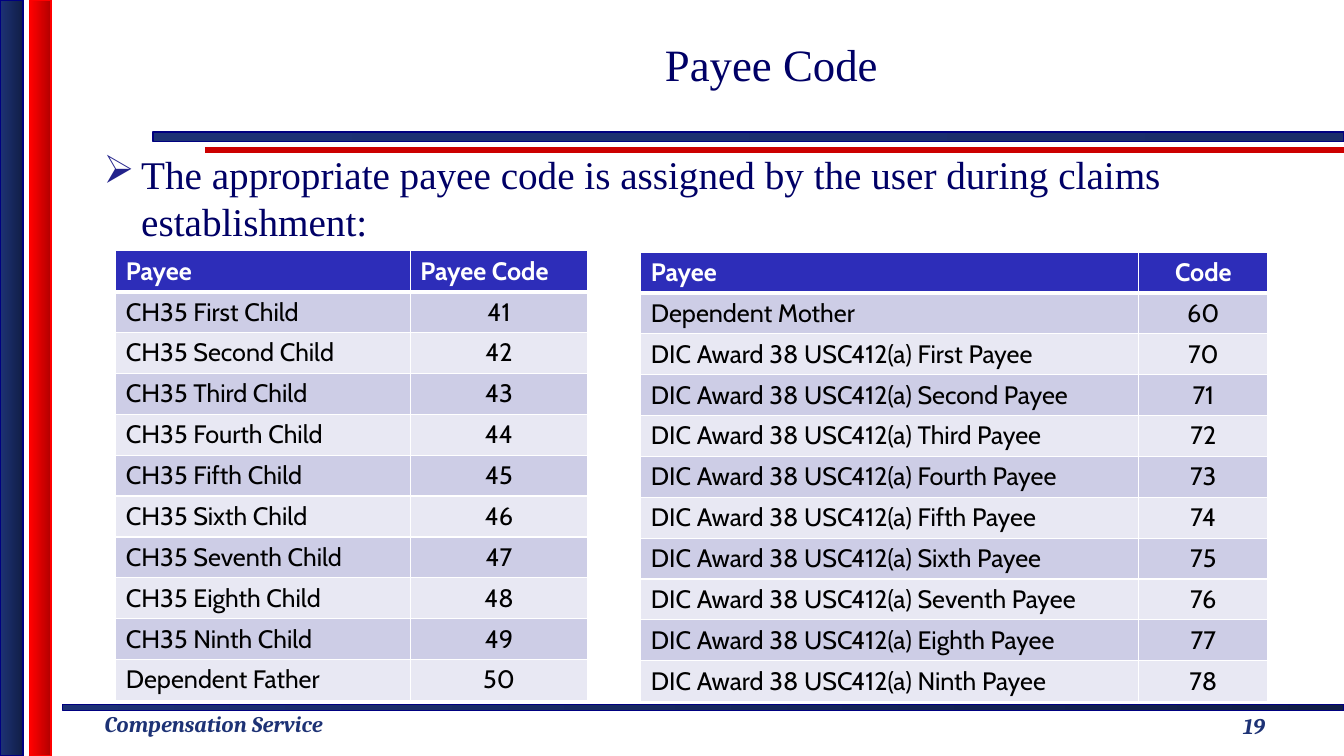
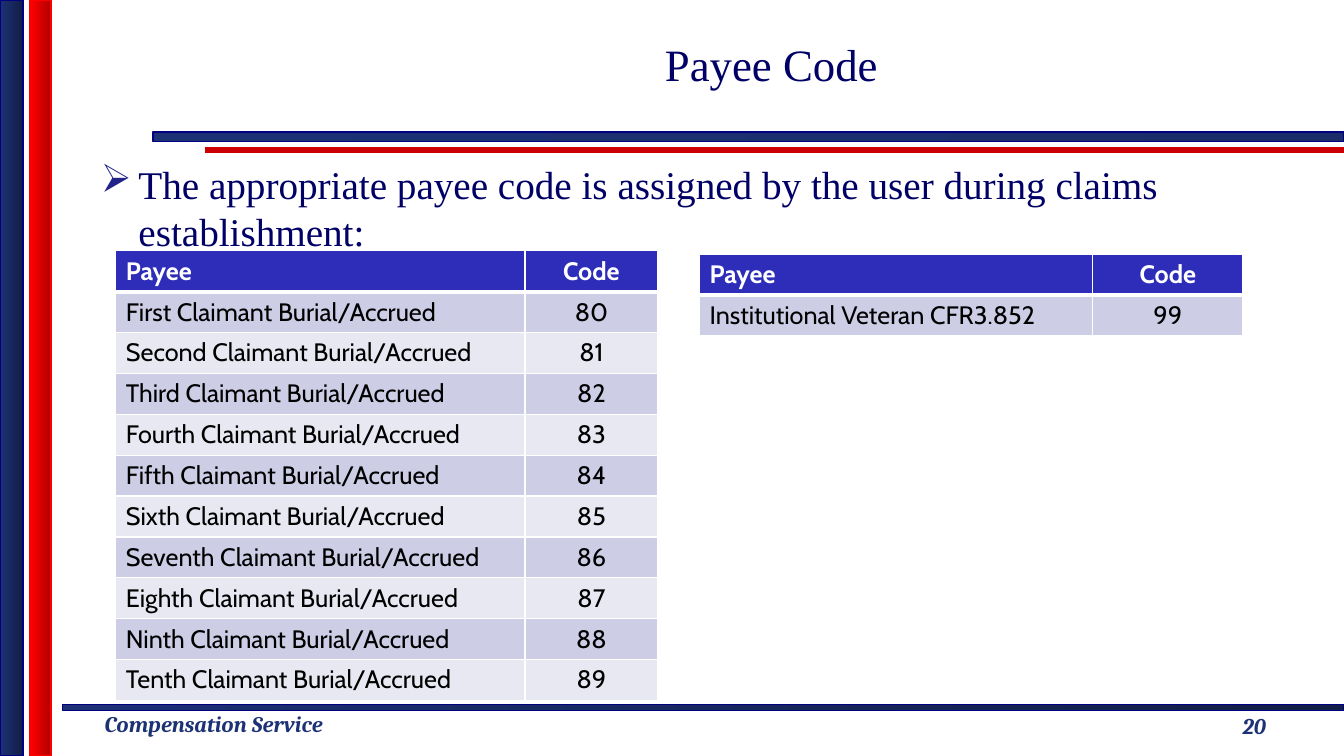
"""Build the two payee code slides."""
import pptx
import pptx.dml.color
import pptx.enum.shapes
import pptx.enum.text
import pptx.oxml
import pptx.oxml.ns
import pptx.util

Cm = pptx.util.Cm
Pt = pptx.util.Pt
RGBColor = pptx.dml.color.RGBColor
ALIGN = pptx.enum.text.PP_ALIGN
MIDDLE = pptx.enum.text.MSO_ANCHOR.MIDDLE
NS = pptx.oxml.ns.nsdecls("a")

NAVY = RGBColor(0x1D, 0x32, 0x75)
DARK = RGBColor(0x11, 0x1E, 0x46)
SLATE = RGBColor(0x1A, 0x2D, 0x69)
EDGE = RGBColor(0x00, 0x00, 0x80)
RED = RGBColor(0xFF, 0x00, 0x00)
BRICK = RGBColor(0xB2, 0x00, 0x00)
RULE = RGBColor(0xCC, 0x00, 0x00)
INK = RGBColor(0x00, 0x00, 0x66)
HEAD = RGBColor(0x2D, 0x2D, 0xB9)
BANDS = [RGBColor(0xE8, 0xE8, 0xF3), RGBColor(0xCD, 0xCD, 0xE6)]
WHITE = RGBColor(0xFF, 0xFF, 0xFF)
BLACK = RGBColor(0x00, 0x00, 0x00)

WIDE, HIGH = 33.87, 19.05
ROW = 1.03
BARS = [
    (1.57, 17.75, WIDE - 1.57, 0.15, NAVY, DARK, EDGE),
    (3.86, 3.33, WIDE - 3.86, 0.23, NAVY, SLATE, EDGE),
    (0, 0, 0.58, HIGH, NAVY, DARK, EDGE),
    (0.76, 0, 0.53, HIGH, RED, BRICK, RED),
]
RANKS = ["First", "Second", "Third", "Fourth", "Fifth",
         "Sixth", "Seventh", "Eighth", "Ninth", "Tenth"]

child = [(f"CH35 {rank} Child", 41 + i) for i, rank in enumerate(RANKS[:9])]
award = [(f"DIC Award 38 USC412(a) {rank} Payee", 70 + i) for i, rank in enumerate(RANKS[:9])]
claim = [(f"{rank} Claimant Burial/Accrued", 80 + i) for i, rank in enumerate(RANKS)]
PAGES = [
    (19, 2.36, 3.66, [
        (2.92, 6.32, (7.42, 4.47),
         [("Payee", "Payee Code"), *child, ("Dependent Father", 50)]),
        (16.15, 6.35, (12.55, 3.25),
         [("Payee", "Code"), ("Dependent Mother", 60), *award]),
    ]),
    (20, 2.29, 3.91, [
        (2.92, 6.32, (10.31, 3.35), [("Payee", "Code"), *claim]),
        (17.63, 6.4, (9.91, 3.78),
         [("Payee", "Code"), ("Institutional Veteran CFR3.852", 99)]),
    ]),
]


def write(frame, text, face, size, tint, bold=False, slant=False, align=ALIGN.LEFT):
    frame.text = text
    para = frame.paragraphs[0]
    para.alignment = align
    font = para.runs[0].font
    font.name, font.size, font.bold, font.italic = face, Pt(size), bold, slant
    font.color.rgb = tint


def border(cell, row):
    props = cell._tc.get_or_add_tcPr()
    sizes = {"L": 1, "R": 1, "T": 3 if row == 1 else 1, "B": 3 if row == 0 else 1}
    for side, size in sizes.items():
        props.append(pptx.oxml.parse_xml(
            f'<a:ln{side} {NS} w="{Pt(size)}"><a:solidFill>'
            f'<a:srgbClr val="{WHITE}"/></a:solidFill></a:ln{side}>'))


deck = pptx.Presentation()
deck.slide_width, deck.slide_height = Cm(WIDE), Cm(HIGH)

for number, left, top, grids in PAGES:
    slide = deck.slides.add_slide(deck.slide_layouts[5])
    shapes = slide.shapes

    rule = shapes.add_connector(pptx.enum.shapes.MSO_CONNECTOR.STRAIGHT,
                                Cm(5.16), Cm(3.78), Cm(WIDE), Cm(3.78))
    rule.line.color.rgb = RULE
    rule.line.width = Pt(4)
    rule._element.spPr.append(pptx.oxml.parse_xml(f"<a:effectLst {NS}/>"))

    for x, y, wide, high, start, end, edge in BARS:
        bar = shapes.add_shape(pptx.enum.shapes.MSO_SHAPE.RECTANGLE,
                               Cm(x), Cm(y), Cm(wide), Cm(high))
        bar.shadow.inherit = False
        bar.fill.gradient()
        bar.fill.gradient_angle = 0
        for stop, tint in zip(bar.fill.gradient_stops, (start, end)):
            stop.color.rgb = tint
        bar.line.color.rgb = edge
        bar.line.width = Pt(1)

    foot = shapes.add_textbox(Cm(2.39), Cm(17.78), Cm(7.16), Cm(0.94)).text_frame
    foot.word_wrap = False
    write(foot, "Compensation Service", "Cambria", 16, NAVY, True, True)

    page = shapes.add_textbox(Cm(29.36), Cm(17.65), Cm(4.5), Cm(1.27)).text_frame
    page.word_wrap = True
    page.vertical_anchor = MIDDLE
    write(page, str(number), "Cambria", 16, NAVY, True, True, ALIGN.CENTER)

    title = shapes.title
    title.left, title.top, title.width, title.height = Cm(5.94), Cm(0), Cm(27), Cm(3.2)
    title.text_frame.vertical_anchor = MIDDLE
    write(title.text_frame, "Payee Code", "Times New Roman", 32, INK, align=ALIGN.CENTER)

    body = shapes.add_textbox(Cm(left), Cm(top), Cm(30.4), Cm(2.6)).text_frame
    body.word_wrap = True
    write(body, "The appropriate payee code is assigned by the user during claims establishment:",
          "Times New Roman", 28, INK)
    props = body.paragraphs[0]._p.get_or_add_pPr()
    props.set("marL", str(Cm(0.95)))
    props.set("indent", str(-Cm(0.95)))
    props.append(pptx.oxml.parse_xml(f'<a:buClr {NS}><a:srgbClr val="22228B"/></a:buClr>'))
    props.append(pptx.oxml.parse_xml(f'<a:buChar {NS} char="➢"/>'))

    for x, y, cols, rows in grids:
        table = shapes.add_table(len(rows), 2, Cm(x), Cm(y),
                                 Cm(sum(cols)), Cm(ROW * len(rows))).table
        for c, wide in enumerate(cols):
            table.columns[c].width = Cm(wide)
        for r, row in enumerate(rows):
            table.rows[r].height = Cm(ROW)
            for c, text in enumerate(row):
                cell = table.cell(r, c)
                border(cell, r)
                cell.fill.solid()
                cell.fill.fore_color.rgb = BANDS[r % 2] if r else HEAD
                mid = c == 1 and text != "Payee Code"
                write(cell.text_frame, str(text), "Cabin", 18, BLACK if r else WHITE,
                      bold=r == 0, align=ALIGN.CENTER if mid else ALIGN.LEFT)

deck.save("out.pptx")
